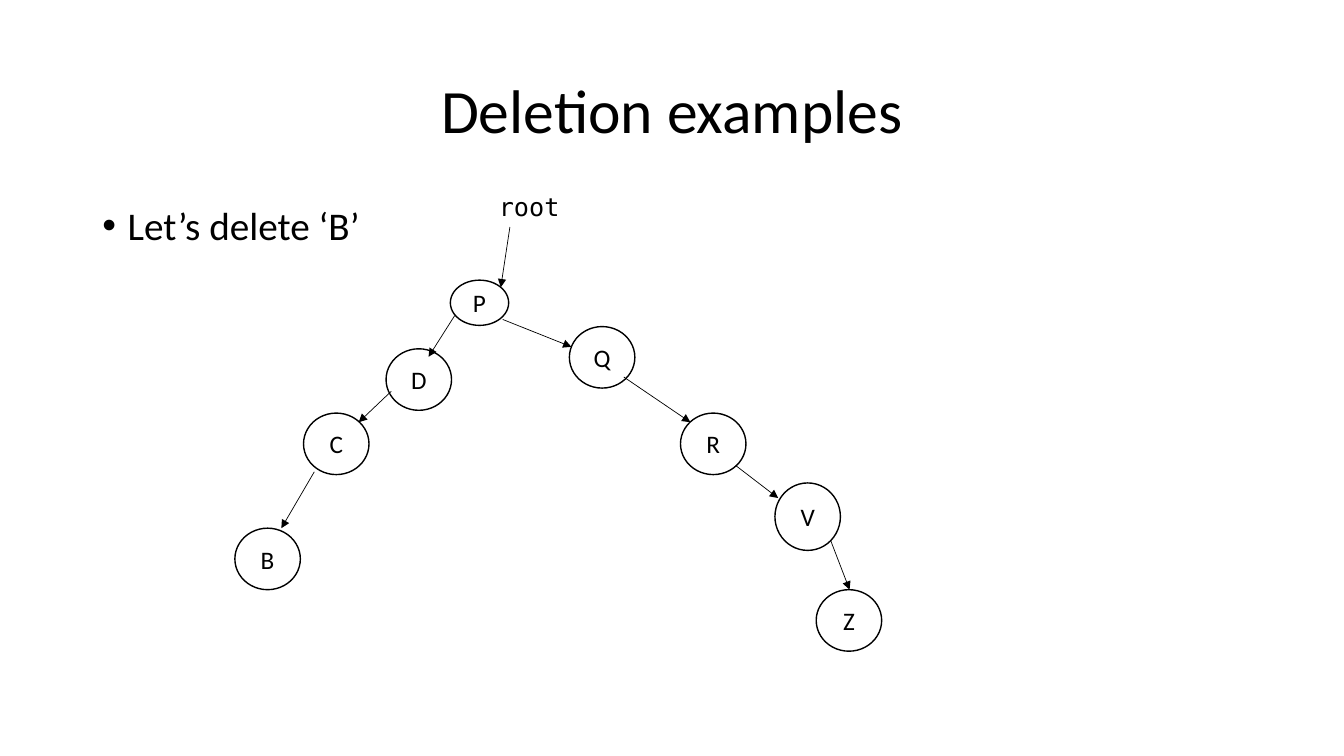
from lxml import etree
from pptx import Presentation
from pptx.dml.color import RGBColor
from pptx.enum.shapes import MSO_CONNECTOR, MSO_SHAPE
from pptx.enum.text import MSO_ANCHOR, PP_ALIGN
from pptx.oxml.ns import qn
from pptx.util import Cm, Pt

OVAL, LINE = MSO_SHAPE.OVAL, MSO_CONNECTOR.STRAIGHT
MID, TOP = MSO_ANCHOR.MIDDLE, MSO_ANCHOR.TOP
LEFT, CENTER = PP_ALIGN.LEFT, PP_ALIGN.CENTER
SANS, MONO, INK = "Calibri", "DejaVu Sans Mono", "000000"

# Content, lengths in cm
TITLE = "Deletion examples"
POINT = "Let’s delete ‘B’"
ROOT = "root"
SIZE = (1.65, 1.55)
ODD = {"P": (1.47, 1.14), "V": (1.65, 1.7)}  # nodes of another size
NODES = {
    "P": (11.35, 7.06),
    "D": (9.73, 8.79),
    "C": (7.65, 10.41),
    "B": (5.92, 13.31),
    "Q": (14.35, 8.23),
    "R": (17.15, 10.41),
    "V": (19.53, 12.17),
    "Z": (20.57, 14.86),
}
ARROWS = [
    (12.85, 5.72, 12.62, 7.24),   # root to P
    (11.46, 7.95, 10.8, 8.99),    # P to D
    (9.86, 9.86, 9.04, 10.64),    # D to C
    (7.92, 11.89, 7.09, 13.31),   # C to B
    (12.67, 8.05, 14.4, 8.74),    # P to Q
    (15.72, 9.5, 17.4, 10.64),    # Q to R
    (18.54, 11.73, 19.61, 12.55),  # R to V
    (20.93, 13.61, 21.41, 14.86),  # V to Z
]


def color(code):
    return RGBColor.from_string(code)


def write(shape, text, size, font=SANS, align=LEFT, anchor=TOP):
    frame = shape.text_frame
    frame.text = text
    frame.vertical_anchor = anchor
    par = frame.paragraphs[0]
    par.alignment = align
    face = par.runs[0].font
    face.name, face.size = font, Pt(size)
    face.color.rgb = color(INK)
    return par


def box(left, top, width, height):
    shape = slide.shapes.add_textbox(Cm(left), Cm(top), Cm(width), Cm(height))
    shape.text_frame.word_wrap = True
    return shape


def node(name, left, top):
    width, height = ODD.get(name, SIZE)
    shape = slide.shapes.add_shape(OVAL, Cm(left), Cm(top), Cm(width), Cm(height))
    shape.shadow.inherit = False
    shape.fill.background()
    shape.line.color.rgb = color(INK)
    shape.line.width = Pt(1)
    write(shape, name, 18, align=CENTER, anchor=MID)
    frame = shape.text_frame
    frame.word_wrap = False
    frame.margin_left = frame.margin_right = 0
    frame.margin_top = frame.margin_bottom = 0


def arrow(*ends):
    link = slide.shapes.add_connector(LINE, *map(Cm, ends))
    link.line.color.rgb = color(INK)
    link.line.width = Pt(0.5)
    props = link._element.spPr
    etree.SubElement(props.find(qn("a:ln")), qn("a:tailEnd"), type="triangle")
    etree.SubElement(props, qn("a:effectLst"))


deck = Presentation()
deck.slide_width, deck.slide_height = Cm(33.87), Cm(19.05)
slide = deck.slides.add_slide(deck.slide_layouts[6])

# Title and bullet point
head = write(box(2.33, 1.01, 29.21, 3.68), TITLE, 44, align=CENTER, anchor=MID)
head.line_spacing = 0.9
point = write(box(2.33, 5.07, 29.21, 12.09), POINT, 28)
point.line_spacing = 0.9
point.space_before = Pt(10)
props = point._p.get_or_add_pPr()
props.set("marL", str(Cm(0.64)))
props.set("indent", str(-Cm(0.64)))
etree.SubElement(props, qn("a:buFont"), typeface="Arial")
etree.SubElement(props, qn("a:buChar"), char="•")

# Tree
write(box(12.32, 4.7, 3.4, 1.02), ROOT, 18, MONO)
for name, place in NODES.items():
    node(name, *place)
for ends in ARROWS:
    arrow(*ends)

deck.save("out.pptx")
